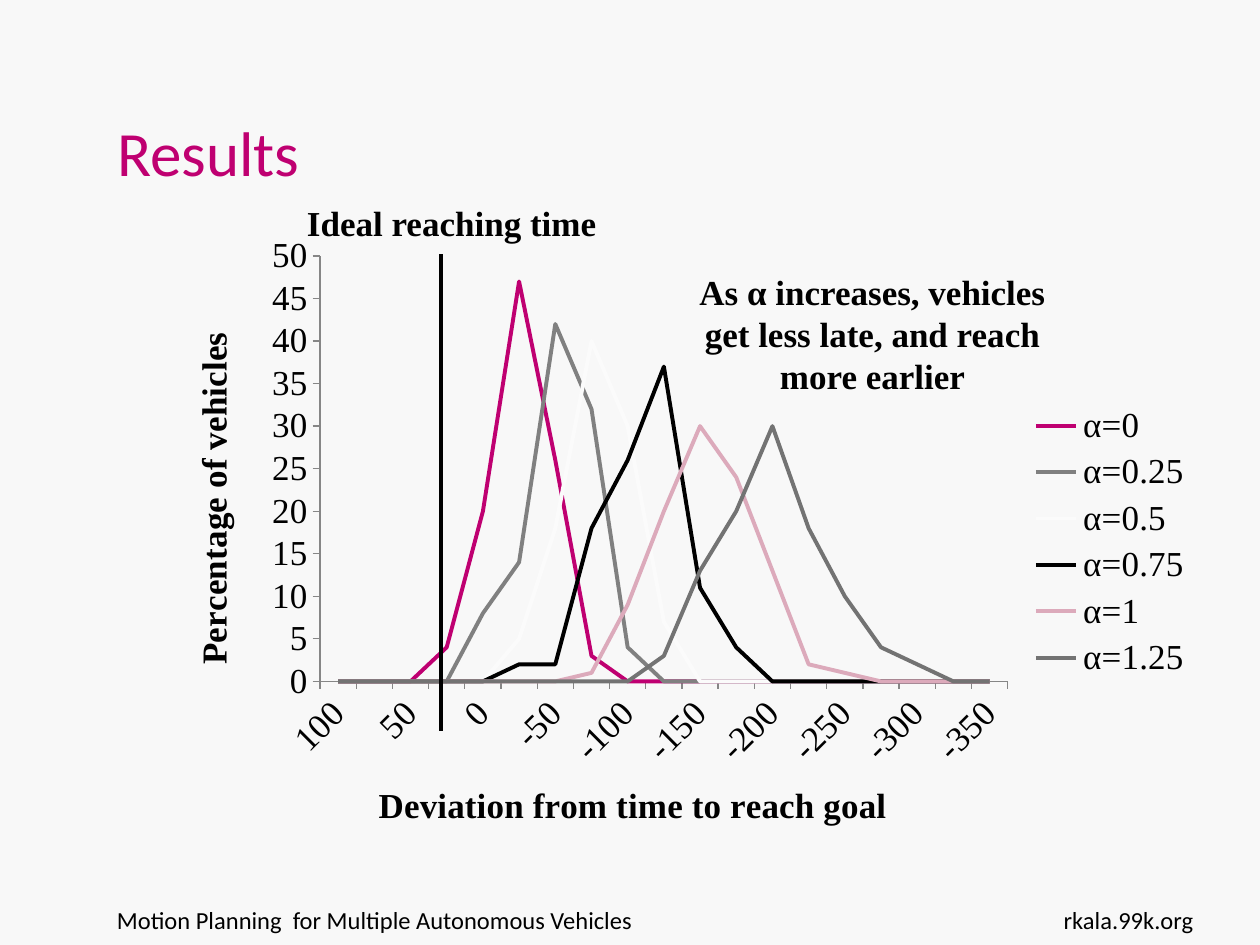
from dataclasses import dataclass

from lxml import etree
from pptx import Presentation
from pptx.chart.data import CategoryChartData
from pptx.dml.color import RGBColor
from pptx.enum.chart import XL_CHART_TYPE as ChartType
from pptx.enum.chart import XL_LEGEND_POSITION as LegendPosition
from pptx.enum.chart import XL_TICK_MARK as TickMark
from pptx.enum.shapes import MSO_CONNECTOR as Connector
from pptx.enum.text import MSO_ANCHOR as Anchor
from pptx.enum.text import PP_ALIGN as Align
from pptx.oxml import parse_xml
from pptx.oxml.ns import nsdecls, qn
from pptx.util import Inches, Pt


@dataclass(frozen=True)
class Theme:
    background: str = "F8F8F8"
    accent: str = "BF0071"
    ink: str = "000000"
    axis: str = "868686"
    series: tuple = ("BF0071", "808080", "FBFBFB", "000000", "DCAABB", "737373")
    sans: str = "Calibri"
    serif: str = "Times New Roman"
    title: int = 36
    body: int = 20
    footer: int = 14


theme = Theme()


def write(frame, text, size=theme.body, font=theme.serif, color=theme.ink,
          bold=False, align=Align.LEFT, after=0, wrap=True, anchor=Anchor.TOP):
    frame.word_wrap = wrap
    frame.vertical_anchor = anchor
    para = frame.paragraphs[0]
    para.alignment = align
    para.space_after = Pt(after)
    span = para.add_run()
    span.text = text
    span.font.size = Pt(size)
    span.font.name = font
    span.font.bold = bold
    span.font.color.rgb = RGBColor.from_string(color)


def place(part, target=None, **fractions):
    """Give a chart part a manual layout, in fractions of the chart."""
    old = part.find(qn("c:layout"))
    if old is not None:
        part.remove(old)
    goal = f'<c:layoutTarget val="{target}"/>' if target else ""
    modes = "".join(f'<c:{key}Mode val="edge"/>' for key in "xy")
    values = "".join(f'<c:{key} val="{value}"/>' for key, value in fractions.items())
    layout = parse_xml(f'<c:layout {nsdecls("c")}><c:manualLayout>{goal}{modes}{values}'
                       "</c:manualLayout></c:layout>")
    part.insert(len(part.findall(qn("c:tx"))), layout)


deck = Presentation()
deck.slide_width, deck.slide_height = Inches(10), Inches(7.5)
page = deck.slides.add_slide(deck.slide_layouts[5])
page.background.fill.solid()
page.background.fill.fore_color.rgb = RGBColor.from_string(theme.background)

title = page.shapes.title
title.left, title.top = Inches(0.83), Inches(0.3)
title.width, title.height = Inches(6.77), Inches(1.25)
write(title.text_frame, "Results", size=theme.title, font=theme.sans,
      color=theme.accent, wrap=False, anchor=Anchor.BOTTOM)

# Each curve: index of its first non-zero category, then its values
curves = {
    "α=0": (3, [4, 20, 47, 26, 3]),
    "α=0.25": (4, [8, 14, 42, 32, 4]),
    "α=0.5": (5, [5, 18, 40, 30, 7]),
    "α=0.75": (5, [2, 2, 18, 26, 37, 11, 4]),
    "α=1": (7, [1, 9, 20, 30, 24, 13, 2, 1]),
    "α=1.25": (9, [3, 13, 20, 30, 18, 10, 4, 2]),
}
data = CategoryChartData()
data.categories = [str(deviation) for deviation in range(100, -351, -25)]
count = len(data.categories)
for name, (start, values) in curves.items():
    data.add_series(name, [0] * start + values + [0] * (count - start - len(values)))

chart = page.shapes.add_chart(ChartType.LINE, Inches(1.3), Inches(1.78),
                              Inches(8.27), Inches(5.04), data).chart
chart.has_title = False
chart.font.name = theme.serif
chart.font.size = Pt(theme.body)
chart.font.color.rgb = RGBColor.from_string(theme.ink)
chart.has_legend = True
chart.legend.position = LegendPosition.RIGHT
chart.legend.include_in_layout = False
chart.plots[0].vary_by_categories = False
for series, color in zip(chart.plots[0].series, theme.series):
    series.smooth = False
    series.format.line.width = Pt(2.25)
    series.format.line.color.rgb = RGBColor.from_string(color)

across, up = chart.category_axis, chart.value_axis
for axis, text, x, y in ((across, "Deviation from time to reach goal", 0.2, 0.87),
                         (up, "Percentage of vehicles", 0.02, 0.16)):
    axis.has_major_gridlines = False
    axis.major_tick_mark = TickMark.OUTSIDE
    axis.minor_tick_mark = TickMark.NONE
    axis.format.line.color.rgb = RGBColor.from_string(theme.axis)
    write(axis.axis_title.text_frame, text, bold=True)
    place(axis.axis_title._element, x=x, y=y)
up.minimum_scale, up.maximum_scale, up.major_unit = 0, 50, 5
up.axis_title._element.find(".//" + qn("a:bodyPr")).set("rot", "-5400000")

across.tick_labels.font.size = Pt(theme.body)
across._element.find(qn("c:txPr")).find(qn("a:bodyPr")).set("rot", "-2700000")
skip = etree.Element(qn("c:tickLblSkip"), val="2")
across._element.find(qn("c:noMultiLvlLbl")).addprevious(skip)
plot_area = chart._chartSpace.find(".//" + qn("c:plotArea"))
place(plot_area, target="inner", x=0.15, y=0.05, w=0.66, h=0.67)

ideal = page.shapes.add_connector(Connector.STRAIGHT, Inches(3.5), Inches(5.8),
                                  Inches(3.5), Inches(2.02))
ideal.line.width = Pt(2)
ideal.line.color.rgb = RGBColor.from_string(theme.ink)
etree.SubElement(ideal._element.spPr, qn("a:effectLst"))

note = dict(bold=True, align=Align.CENTER, after=10)
footer = dict(size=theme.footer, font=theme.sans)
for text, left, top, width, height, style in (
    ("Ideal reaching time ", 2.32, 1.55, 2.6, 0.41, note),
    ("As α increases, vehicles get less late, and reach more earlier",
     5.31, 2.1, 3.23, 1.26, note),
    ("Motion Planning  for Multiple Autonomous Vehicles", 0.83, 7.13, 6.93, 0.52, footer),
    ("rkala.99k.org", 8.07, 7.13, 1.5, 0.52, dict(footer, align=Align.RIGHT)),
):
    box = page.shapes.add_textbox(Inches(left), Inches(top), Inches(width), Inches(height))
    write(box.text_frame, text, **style)

deck.save("out.pptx")
